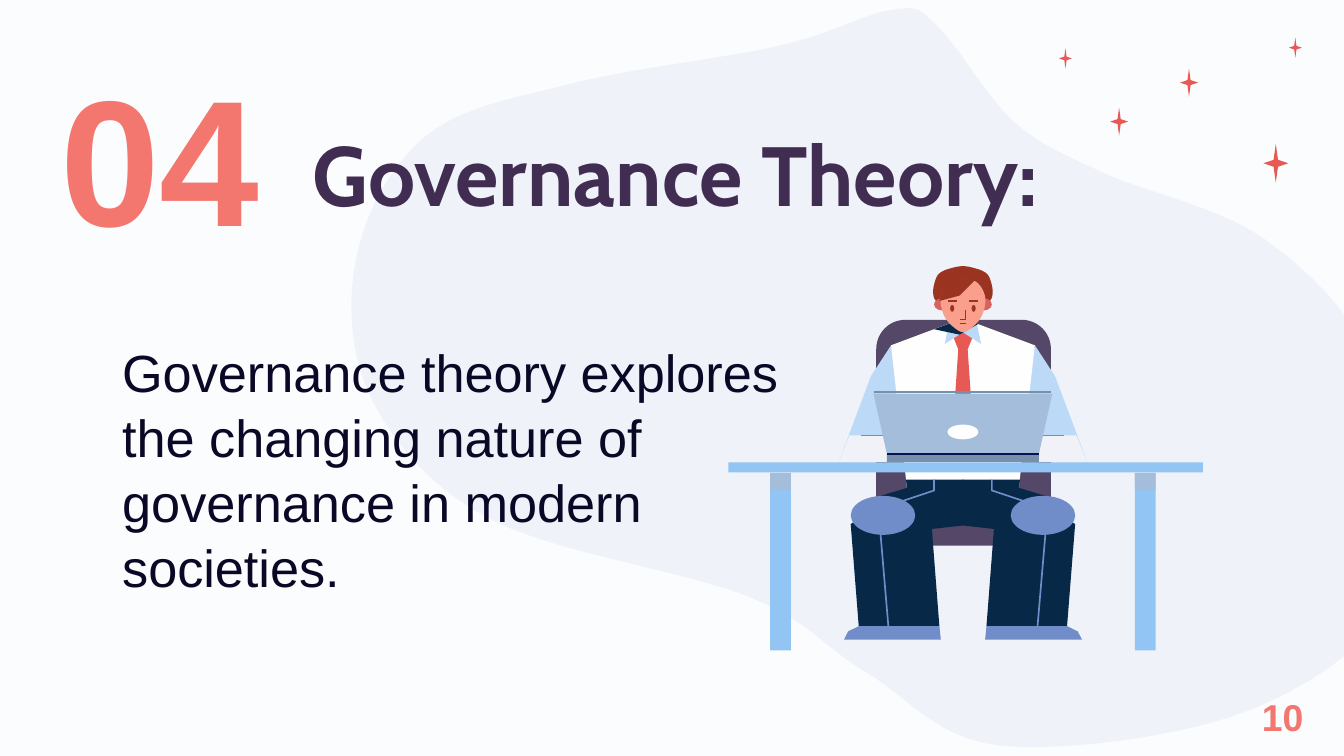
from dataclasses import dataclass
from enum import Enum

from lxml import etree
from pptx import Presentation
from pptx import util as u
from pptx.dml.color import RGBColor
from pptx.enum import shapes, text
from pptx.oxml import ns

GRID_CM = 0.0254
AXIS = 716.5
CURVE_STEPS = 10

PAPER = RGBColor.from_string("FBFCFE")
STEEL = RGBColor.from_string("A4BDDA")
SLATE = RGBColor.from_string("7590AA")
RED = RGBColor.from_string("E65955")
CORAL = RGBColor.from_string("F3766F")
PLUM = RGBColor.from_string("402D51")
CHAIR = RGBColor.from_string("544768")
SLEEVE = RGBColor.from_string("BCDAF7")
VEST = RGBColor.from_string("FEFEFE")
CUFF = RGBColor.from_string("F1F2F7")
NAVY = RGBColor.from_string("072847")
HAIR = RGBColor.from_string("9B3321")
EAR = RGBColor.from_string("D86260")
SKIN = RGBColor.from_string("F99F8C")
BLUE = RGBColor.from_string("708CC9")
EDGE = RGBColor.from_string("091255")
DESK = RGBColor.from_string("92C5F4")
INK = RGBColor.from_string("0A0826")

Point = tuple[float, float]
RECTANGLE = shapes.MSO_SHAPE.RECTANGLE
OVAL = shapes.MSO_SHAPE.OVAL
STAR = shapes.MSO_SHAPE.STAR_4_POINT
ROUND_TOP = shapes.MSO_SHAPE.ROUND_2_SAME_RECTANGLE


class Symmetry(Enum):
    NONE = "one shape as given"
    PAIR = "two mirrored shapes"
    HALF = "one shape closed by its mirror half"


NONE, PAIR, HALF = Symmetry


@dataclass(frozen=True)
class Outline:
    color: RGBColor
    points: list[Point]
    symmetry: Symmetry = NONE
    smooth: bool = False
    stroke: float = 0


@dataclass(frozen=True)
class Preset:
    color: RGBColor
    kind: shapes.MSO_SHAPE
    left: float
    top: float
    width: float
    height: float
    symmetry: Symmetry = NONE


@dataclass(frozen=True)
class Rule:
    color: RGBColor
    start: float
    end: float
    height: float
    stroke: float
    symmetry: Symmetry = NONE


@dataclass(frozen=True)
class Label:
    content: str
    frame: tuple[float, float, float, float]
    size: float
    color: RGBColor
    font: str = "Arial"
    bold: bool = True
    anchor: text.MSO_ANCHOR = text.MSO_ANCHOR.MIDDLE
    inset: float = 0.25
    spacing: float = 1.0


def grid(value: float) -> u.Length:
    return u.Cm(value * GRID_CM)


def flip(value: float, mirrored: bool = True) -> float:
    return 2 * AXIS - value if mirrored else value


def round_off(points: list[Point]) -> list[Point]:
    """Closed Catmull-Rom curve through the points."""
    curve = []
    for index in range(len(points)):
        corners = [points[(index + shift) % len(points)] for shift in (-1, 0, 1, 2)]
        for step in range(CURVE_STEPS):
            t = step / CURVE_STEPS
            curve.append(tuple(
                b + t * (c - a + t * (2 * a - 5 * b + 4 * c - d + t * (3 * b - a - 3 * c + d))) / 2
                for a, b, c, d in zip(*corners)))
    return curve


def paint(shape, color: RGBColor) -> None:
    shape.shadow.inherit = False
    shape.fill.solid()
    shape.fill.fore_color.rgb = color
    shape.line.fill.background()


def draw_outline(page, part: Outline, mirrored: bool = False):
    points = [(flip(x, mirrored), y) for x, y in part.points]
    if part.symmetry is HALF:
        points += [(flip(x), y) for x, y in reversed(points)]
    if part.smooth:
        points = round_off(points)
    corners = [(grid(x), grid(y)) for x, y in points]
    builder = page.shapes.build_freeform(*corners[0], scale=1.0)
    builder.add_line_segments(corners[1:], close=not part.stroke)
    shape = builder.convert_to_shape()
    paint(shape, part.color)
    if part.stroke:
        shape.fill.background()
        shape.line.color.rgb = part.color
        shape.line.width = u.Pt(part.stroke)
    return shape


def draw_preset(page, part: Preset, mirrored: bool = False) -> None:
    left = flip(part.left + part.width) if mirrored else part.left
    shape = page.shapes.add_shape(part.kind, *map(grid, (left, part.top, part.width, part.height)))
    paint(shape, part.color)


def draw_rule(page, part: Rule, mirrored: bool = False) -> None:
    start, end = sorted(flip(x, mirrored) for x in (part.start, part.end))
    rule = page.shapes.add_connector(
        shapes.MSO_CONNECTOR.STRAIGHT, *map(grid, (start, part.height, end, part.height)))
    rule.line.color.rgb = part.color
    rule.line.width = u.Pt(part.stroke)
    etree.SubElement(rule._element.spPr, ns.qn("a:effectLst"))


def draw_label(page, label: Label) -> None:
    box = page.shapes.add_textbox(*map(u.Cm, label.frame))
    frame = box.text_frame
    frame.word_wrap = True
    frame.vertical_anchor = label.anchor
    frame.margin_top = frame.margin_bottom = u.Cm(label.inset)
    para = frame.paragraphs[0]
    para.text = label.content
    para.line_spacing = label.spacing
    para.font.name = label.font
    para.font.size = u.Pt(label.size)
    para.font.bold = label.bold
    para.font.color.rgb = label.color


BLOB = Outline(STEEL, [
    (665, 7), (580, 34), (426, 62), (317, 101), (265, 192), (277, 298), (366, 387), (557, 444), (644, 500),
    (745, 555), (931, 528), (1040, 435), (1022, 274), (941, 178), (822, 129), (755, 91), (698, 20)], smooth=True)

SPARKLES = [Preset(RED, STAR, left, top, height * 0.64, height) for left, top, height in (
    (940, 107, 29), (788, 36, 15), (959, 28, 15), (826, 80, 21), (878, 51, 21))]

SCENE = [
    Preset(CHAIR, ROUND_TOP, 652, 238, 130, 168),
    Outline(SLEEVE, [(663, 257), (648, 280), (624, 344), (683, 344)], PAIR),
    Outline(VEST, [(AXIS, 237), (663, 257), (675, 364)], HALF),
    Outline(RED, [(AXIS, 247), (709, 250), (713, 260), (709, 319), (AXIS, 326)], HALF),
    Outline(SLEEVE, [(706, 241), (703, 256), (717, 247)], PAIR),
    Outline(CUFF, [(632, 324), (624, 344), (717, 344), (694, 324)], PAIR),
    Outline(NAVY, [(717, 237), (695, 245), (714, 249), (728, 241)]),
    Outline(HAIR, [(710, 199), (697, 206), (698, 225)], HALF, smooth=True),
    Preset(EAR, OVAL, 695, 222, 12, 9, PAIR),
    Outline(SKIN, [(708, 209), (700, 221), (703, 236), (713, 246)], HALF, smooth=True),
    Outline(HAIR, [(726, 208), (704, 206), (699, 224), (714, 220)]),
    Preset(HAIR, OVAL, 707, 227, 3, 5, PAIR),
    Rule(HAIR, 705, 712, 224, 0.84, PAIR),
    Outline(HAIR, [(714, 238), (718, 238), (718, 231)], stroke=0.42),
    Rule(HAIR, 714, 719, 241, 0.42),
    Outline(STEEL, [(650, 293), (660, 338)], HALF),
    Preset(SLATE, RECTANGLE, 660, 338, 113, 6),
    Preset(VEST, OVAL, 705, 316, 23, 11),
    Rule(SLATE, 650, 782, 292, 1),
    Outline(NAVY, [(674, 357), (675, 363), (652, 370), (655, 398), (717, 391), (717, 357)], PAIR),
    Outline(NAVY, [(633, 390), (639, 466), (699, 466), (693, 388), (662, 372)], PAIR),
    Outline(BLUE, [(639, 466), (631, 470), (628, 476), (700, 476), (699, 466)], PAIR),
    Preset(BLUE, OVAL, 633, 369, 48, 29, PAIR),
    Rule(EDGE, 660, 773, 338, 0.84),
    Outline(BLUE, [(661, 466), (654, 384), (662, 376), (695, 365), (695, 357)], PAIR, stroke=0.9),
    Rule(BLUE, 641, 657, 324, 0.9, PAIR),
    Preset(DESK, RECTANGLE, 542, 344, 353, 7.5),
    Preset(DESK, RECTANGLE, 573, 352, 15.5, 132, PAIR),
    Preset(STEEL, RECTANGLE, 573, 352, 15.5, 12.5, PAIR),
]

LABELS = [
    Label("Governance Theory:", (5.66, 2.06, 15.14, 3.07), 45, PLUM, "Cabin", anchor=text.MSO_ANCHOR.TOP),
    Label("Governance theory explores the changing nature of governance in modern societies.",
          (2.06, 6.25, 13.82, 5.05), 28, INK, bold=False, anchor=text.MSO_ANCHOR.TOP, inset=0.13, spacing=1.04),
    Label("04", (0.89, 1.75, 7.01, 2.34), 96, CORAL),
    Label("10", (23.6, 12.75, 2.54, 1.6), 20, CORAL),
]

DRAW = {Outline: draw_outline, Preset: draw_preset, Rule: draw_rule}


def main() -> None:
    deck = Presentation()
    deck.slide_width, deck.slide_height = u.Cm(25.4), u.Cm(14.29)
    page = deck.slides.add_slide(deck.slide_layouts[6])
    page.background.fill.solid()
    page.background.fill.fore_color.rgb = PAPER

    blob = draw_outline(page, BLOB)
    tint = blob._element.spPr.find(ns.qn("a:solidFill"))[0]
    etree.SubElement(tint, ns.qn("a:alpha"), val="13000")
    for part in SPARKLES + SCENE:
        for mirrored in (False, True) if part.symmetry is PAIR else (False,):
            DRAW[type(part)](page, part, mirrored)
    for label in LABELS:
        draw_label(page, label)
    deck.save("out.pptx")


if __name__ == "__main__":
    main()
